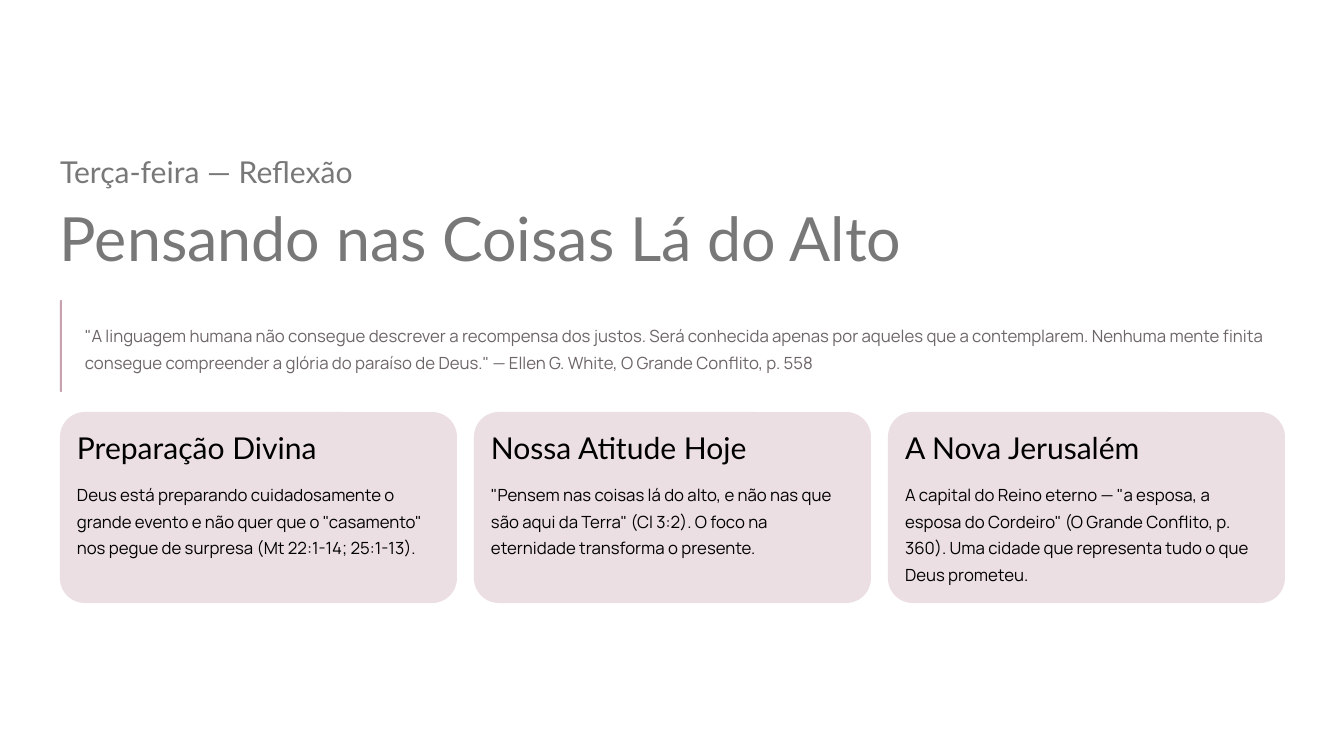
import pptx
import pptx.util
import pptx.dml.color
import pptx.enum.shapes

PX = 914400 / 100.8
COLORS = {
    "page": "FFFFFF",
    "title": "787878",
    "quote": "6E6666",
    "bar": "C7A2AC",
    "card": "ECDFE3",
    "ink": "000000",
}
LEFT = 60
CARD_TOP, CARD_WIDTH, CARD_HEIGHT = 412, 397, 191
CARD_GAP, CARD_PADDING = 17, 17

deck = pptx.Presentation()
deck.slide_width = round(1344 * PX)
deck.slide_height = round(756 * PX)
page = deck.slides.add_slide(deck.slide_layouts[6])
page.background.fill.solid()
page.background.fill.fore_color.rgb = pptx.dml.color.RGBColor.from_string(COLORS["page"])


def add_text(text, *, at, size, font, color, spacing, wrap):
    box = page.shapes.add_textbox(*(round(length * PX) for length in at))
    frame = box.text_frame
    frame.margin_left = frame.margin_top = frame.margin_right = frame.margin_bottom = 0
    frame.word_wrap = wrap
    para = frame.paragraphs[0]
    para.line_spacing = spacing
    span = para.add_run()
    span.text = text
    span.font.size = pptx.util.Pt(size)
    span.font.name = font
    span.font.color.rgb = pptx.dml.color.RGBColor.from_string(COLORS[color])


def add_rounded(*, at, radius, color):
    """Add a borderless rounded rectangle; radius is a share of its short side."""
    shape = page.shapes.add_shape(
        pptx.enum.shapes.MSO_SHAPE.ROUNDED_RECTANGLE, *(round(length * PX) for length in at)
    )
    shape.adjustments[0] = radius
    shape.shadow.inherit = False
    shape.fill.solid()
    shape.fill.fore_color.rgb = pptx.dml.color.RGBColor.from_string(COLORS[color])
    shape.line.fill.background()


heading = {"font": "Lato", "spacing": 1.04, "wrap": False}
body = {"font": "Manrope", "size": 12, "spacing": 1.33, "wrap": True}

add_text("Terça-feira — Reflexão", at=(LEFT, 152, 373, 38), size=21.5, color="title", **heading)
add_text("Pensando nas Coisas Lá do Alto", at=(LEFT, 198, 923, 77), size=43.5, color="title", **heading)

add_rounded(at=(LEFT, 300, 2, 92), radius=0.5, color="bar")
add_text(
    '"A linguagem humana não consegue descrever a recompensa dos justos. Será conhecida apenas '
    "por aqueles que a contemplarem. Nenhuma mente finita consegue compreender a glória do "
    'paraíso de Deus." — Ellen G. White, O Grande Conflito, p. 558',
    at=(85, 319, 1200, 54), color="quote", **body,
)

cards = [
    (
        "Preparação Divina",
        'Deus está preparando cuidadosamente o grande evento e não quer que o "casamento" '
        "nos pegue de surpresa (Mt 22:1-14; 25:1-13).",
    ),
    (
        "Nossa Atitude Hoje",
        '"Pensem nas coisas lá do alto, e não nas que são aqui da Terra" (Cl 3:2). '
        "O foco na eternidade transforma o presente.",
    ),
    (
        "A Nova Jerusalém",
        'A capital do Reino eterno — "a esposa, a esposa do Cordeiro" (O Grande Conflito, '
        "p. 360). Uma cidade que representa tudo o que Deus prometeu.",
    ),
]
for column, (card_title, card_text) in enumerate(cards):
    card_left = LEFT + column * (CARD_WIDTH + CARD_GAP)
    text_left = card_left + CARD_PADDING
    text_width = CARD_WIDTH - 2 * CARD_PADDING
    add_rounded(at=(card_left, CARD_TOP, CARD_WIDTH, CARD_HEIGHT), radius=0.13, color="card")
    add_text(card_title, at=(text_left, CARD_TOP + 16, 306, 38), size=21.5, color="ink", **heading)
    add_text(card_text, at=(text_left, CARD_TOP + 66, text_width, 109), color="ink", **body)

deck.save("out.pptx")
